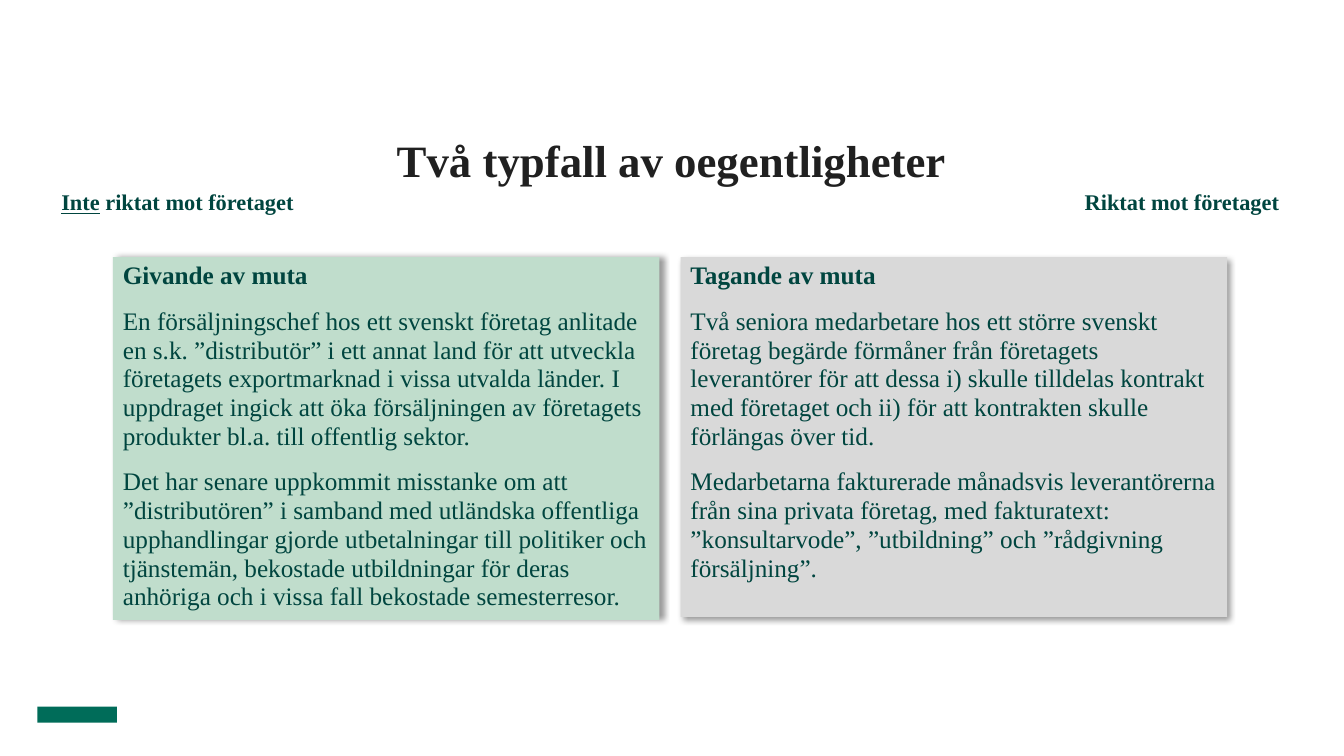
"""Build a slide that compares two typical cases of misconduct."""
from lxml import etree
from pptx import Presentation
from pptx.dml.color import RGBColor
from pptx.enum.shapes import MSO_SHAPE as Shape
from pptx.enum.text import MSO_ANCHOR as Anchor, MSO_AUTO_SIZE as AutoSize, PP_ALIGN as Align
from pptx.oxml.ns import qn
from pptx.util import Emu, Pt

EMU_PER_PX = 9144
FONT = "Times New Roman"
INK = RGBColor(0x20, 0x20, 0x20)
DARK_GREEN = RGBColor(0x00, 0x45, 0x3F)
LOGO_GREEN = RGBColor(0x00, 0x6C, 0x59)
MINT = RGBColor(0xC0, 0xDD, 0xCC)
GREY = RGBColor(0xD9, 0xD9, 0xD9)
BLACK = RGBColor(0x00, 0x00, 0x00)

GIVING = [
    "Givande av muta",
    "En försäljningschef hos ett svenskt företag anlitade en s.k. ”distributör” i ett annat land "
    "för att utveckla företagets exportmarknad i vissa utvalda länder. I uppdraget ingick att öka "
    "försäljningen av företagets produkter bl.a. till offentlig sektor.",
    "Det har senare uppkommit misstanke om att ”distributören” i samband med utländska offentliga "
    "upphandlingar gjorde utbetalningar till politiker och tjänstemän, bekostade utbildningar för "
    "deras anhöriga och i vissa fall bekostade semesterresor.",
]
TAKING = [
    "Tagande av muta",
    "Två seniora medarbetare hos ett större svenskt företag begärde förmåner från företagets "
    "leverantörer för att dessa i) skulle tilldelas kontrakt med företaget och ii) för att "
    "kontrakten skulle förlängas över tid.",
    "Medarbetarna fakturerade månadsvis leverantörerna från sina privata företag, med fakturatext: "
    "”konsultarvode”, ”utbildning” och ”rådgivning försäljning”.",
]


def px(*lengths):
    """Turn pixel lengths into EMU."""
    return [Emu(length * EMU_PER_PX) for length in lengths]


def style_span(span, size, color, bold):
    """Set the font of one run."""
    span.font.name = FONT
    span.font.size = Pt(size)
    span.font.bold = bold
    span.font.color.rgb = color


def style_para(para, size, bold):
    """Set the spacing, alignment and font of a body paragraph."""
    para.alignment = Align.LEFT
    para.line_spacing = 0.95
    para.space_before = Pt(12)
    for span in para.runs:
        style_span(span, size, DARK_GREEN, bold)


def add_shadow(box, angle):
    """Give a shape a soft black outer shadow."""
    box.shadow.inherit = False
    effects = box._element.spPr.find(qn("a:effectLst"))
    shadow = etree.SubElement(effects, qn("a:outerShdw"), blurRad=str(Pt(4)), dist=str(Pt(3)),
                              dir=str(angle * 60000), algn="tl", rotWithShape="0")
    color = etree.SubElement(shadow, qn("a:srgbClr"), val=str(BLACK))
    etree.SubElement(color, qn("a:alpha"), val="40000")


def add_block(page, left, top, width, height, fill):
    """Add a filled rectangle without an outline."""
    block = page.shapes.add_shape(Shape.RECTANGLE, *px(left, top, width, height))
    block.shadow.inherit = False
    block.fill.solid()
    block.fill.fore_color.rgb = fill
    block.line.fill.background()
    return block


def add_case(page, left, height, fill, angle, texts):
    """Add a shadowed case box with a bold heading and its paragraphs."""
    box = add_block(page, left, 255, 542, height, fill)
    add_shadow(box, angle)
    frame = box.text_frame
    frame.word_wrap = True
    frame.vertical_anchor = Anchor.TOP
    frame.auto_size = AutoSize.SHAPE_TO_FIT_TEXT
    frame.text = "\n".join(texts)
    for index, para in enumerate(frame.paragraphs):
        style_para(para, 18, index == 0)


def add_label(page, left, width, text, underlined=""):
    """Add a bold label, with an optional underlined opening word."""
    box = page.shapes.add_textbox(*px(left, 184, width, 36))
    frame = box.text_frame
    frame.word_wrap = True
    frame.auto_size = AutoSize.SHAPE_TO_FIT_TEXT
    para = frame.paragraphs[0]
    if underlined:
        opening = para.add_run()
        opening.text = underlined
        opening.font.underline = True
    para.add_run().text = text
    style_para(para, 16, True)


def set_title(page, text):
    """Place and format the title placeholder."""
    title = page.shapes.title
    title.left, title.top, title.width, title.height = px(178, 107, 976, 78)
    frame = title.text_frame
    frame.margin_left = frame.margin_top = frame.margin_right = frame.margin_bottom = 0
    frame.auto_size = AutoSize.NONE
    frame.word_wrap = True
    frame.vertical_anchor = Anchor.BOTTOM
    frame.text = text
    para = frame.paragraphs[0]
    para.alignment = Align.CENTER
    style_span(para.runs[0], 32, INK, True)


def main():
    """Build and save the deck."""
    deck = Presentation()
    deck.slide_width, deck.slide_height = px(1333, 750)
    page = deck.slides.add_slide(deck.slide_layouts.get_by_name("Title Only"))
    set_title(page, "Två typfall av oegentligheter")
    add_block(page, 37, 701, 79, 16, LOGO_GREEN)
    add_case(page, 112, 360, MINT, 0, GIVING)
    add_case(page, 675, 357, GREY, 45, TAKING)
    add_label(page, 1066, 231, "Riktat mot företaget")
    add_label(page, 51, 256, " riktat mot företaget", underlined="Inte")
    deck.save("out.pptx")


if __name__ == "__main__":
    main()
